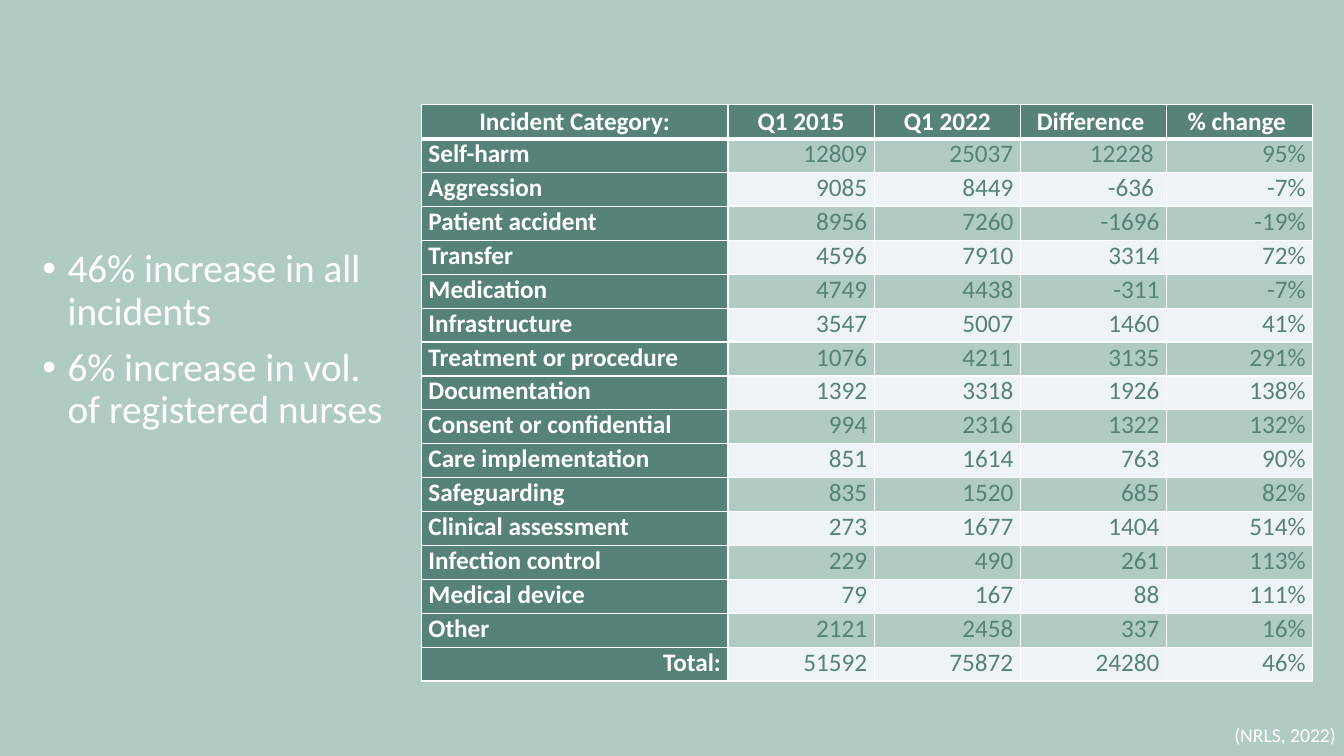
"""Build a slide comparing incident reports by category in Q1 2015 and Q1 2022."""
from dataclasses import dataclass

from lxml.etree import SubElement
from pptx import Presentation
from pptx.dml.color import RGBColor
from pptx.enum.text import MSO_ANCHOR as Anchor, MSO_AUTO_SIZE as AutoSize, PP_ALIGN as Align
from pptx.oxml import parse_xml
from pptx.oxml.ns import nsdecls, qn
from pptx.util import Inches, Pt

FINDINGS = ["46% increase in all incidents", "6% increase in vol. of registered nurses"]
SOURCE = "(NRLS, 2022)"
INCIDENTS = [
    ("Incident Category:", "Q1 2015", "Q1 2022", "Difference ", "% change "),
    ("Self-harm", "12809", "25037", "12228 ", "95%"),
    ("Aggression", "9085", "8449", "-636 ", "-7%"),
    ("Patient accident", "8956", "7260", "-1696", "-19%"),
    ("Transfer", "4596", "7910", "3314", "72%"),
    ("Medication", "4749", "4438", "-311", "-7%"),
    ("Infrastructure", "3547", "5007", "1460", "41%"),
    ("Treatment or procedure", "1076", "4211", "3135", "291%"),
    ("Documentation", "1392", "3318", "1926", "138%"),
    ("Consent or confidential", "994", "2316", "1322", "132%"),
    ("Care implementation", "851", "1614", "763", "90%"),
    ("Safeguarding", "835", "1520", "685", "82%"),
    ("Clinical assessment", "273", "1677", "1404", "514%"),
    ("Infection control", "229", "490", "261", "113%"),
    ("Medical device", "79", "167", "88", "111%"),
    ("Other", "2121", "2458", "337", "16%"),
    ("Total:", "51592", "75872", "24280", "46%"),
]
COLUMN_WIDTHS = (3.04, 1.45, 1.45, 1.45, 1.45)
TABLE_LEFT, TABLE_TOP, TABLE_HEIGHT = 4.18, 1.04, 5.72
FINDINGS_BOX = (0.32, 2.42, 3.65, 2.96)
SOURCE_BOX = (10.08, 7.1, 3.27, 0.4)


@dataclass(frozen=True)
class Theme:
    font: str = "Calibri"
    background: str = "B0CAC4"
    dark: str = "578279"
    light: str = "EEF3F7"
    white: str = "FFFFFF"
    body_size: int = 28
    table_size: int = 18
    source_size: int = 14


THEME = Theme()


def style_font(paragraph, size, color, bold=False):
    for run in paragraph.runs:
        font = run.font
        font.name, font.size, font.bold = THEME.font, Pt(size), bold
        font.color.rgb = RGBColor.from_string(color)


def add_borders(cell, is_header):
    widths = {"lnL": 1, "lnR": 1, "lnB": 3 if is_header else 1}
    if is_header:
        widths = {"lnL": 1, "lnR": 1, "lnT": 1, "lnB": 3}
    properties = cell._tc.get_or_add_tcPr()
    for position, (side, width) in enumerate(widths.items()):
        properties.insert(position, parse_xml(
            f'<a:{side} {nsdecls("a")} w="{Pt(width)}"><a:solidFill>'
            f'<a:srgbClr val="{THEME.white}"/></a:solidFill></a:{side}>'))


def style_cell(cell, text, row, column):
    is_header, is_label = row == 0, column == 0
    is_strong = is_header or is_label
    band = THEME.background if row % 2 else THEME.light
    cell.fill.solid()
    cell.fill.fore_color.rgb = RGBColor.from_string(THEME.dark if is_strong else band)
    cell.margin_left = cell.margin_right = Inches(0.07)
    cell.margin_top = cell.margin_bottom = 0
    cell.vertical_anchor = Anchor.MIDDLE if is_header else Anchor.TOP
    cell.text_frame.text = text
    paragraph = cell.text_frame.paragraphs[0]
    is_total = row == len(INCIDENTS) - 1
    body_alignment = Align.LEFT if is_label and not is_total else Align.RIGHT
    paragraph.alignment = Align.CENTER if is_header else body_alignment
    style_font(paragraph, THEME.table_size, THEME.white if is_strong else THEME.dark, is_strong)
    add_borders(cell, is_header)


def add_incident_table(slide):
    table = slide.shapes.add_table(
        len(INCIDENTS), len(COLUMN_WIDTHS), Inches(TABLE_LEFT), Inches(TABLE_TOP),
        Inches(sum(COLUMN_WIDTHS)), Inches(TABLE_HEIGHT)).table
    table.horz_banding = False
    for column, width in zip(table.columns, COLUMN_WIDTHS):
        column.width = Inches(width)
    for row_index, values in enumerate(INCIDENTS):
        table.rows[row_index].height = Inches(TABLE_HEIGHT / len(INCIDENTS))
        for column_index, text in enumerate(values):
            style_cell(table.cell(row_index, column_index), text, row_index, column_index)


def fill_findings(body):
    body.left, body.top, body.width, body.height = map(Inches, FINDINGS_BOX)
    frame = body.text_frame
    frame.text = "\n".join(FINDINGS)
    frame.auto_size, frame.vertical_anchor = AutoSize.NONE, Anchor.TOP
    for index, paragraph in enumerate(frame.paragraphs):
        properties = paragraph._p.get_or_add_pPr()
        properties.set("marL", str(Inches(0.25)))
        properties.set("indent", str(-Inches(0.25)))
        SubElement(properties, qn("a:buFont"), typeface="Arial")
        SubElement(properties, qn("a:buChar"), char="•")
        paragraph.line_spacing = 0.9
        paragraph.space_before = Pt(10 if index else 0)
        style_font(paragraph, THEME.body_size, THEME.white)


def add_source(slide):
    frame = slide.shapes.add_textbox(*map(Inches, SOURCE_BOX)).text_frame
    frame.word_wrap, frame.vertical_anchor = True, Anchor.MIDDLE
    frame.text = SOURCE
    paragraph = frame.paragraphs[0]
    paragraph.alignment, paragraph.line_spacing = Align.RIGHT, 0.9
    style_font(paragraph, THEME.source_size, THEME.white)


def main():
    presentation = Presentation()
    presentation.slide_width, presentation.slide_height = Inches(13.33), Inches(7.5)
    slide = presentation.slides.add_slide(presentation.slide_layouts[1])
    slide.background.fill.solid()
    slide.background.fill.fore_color.rgb = RGBColor.from_string(THEME.background)
    title = slide.shapes.title.element
    title.getparent().remove(title)
    fill_findings(slide.placeholders[1])
    add_incident_table(slide)
    add_source(slide)
    presentation.save("out.pptx")


if __name__ == "__main__":
    main()
